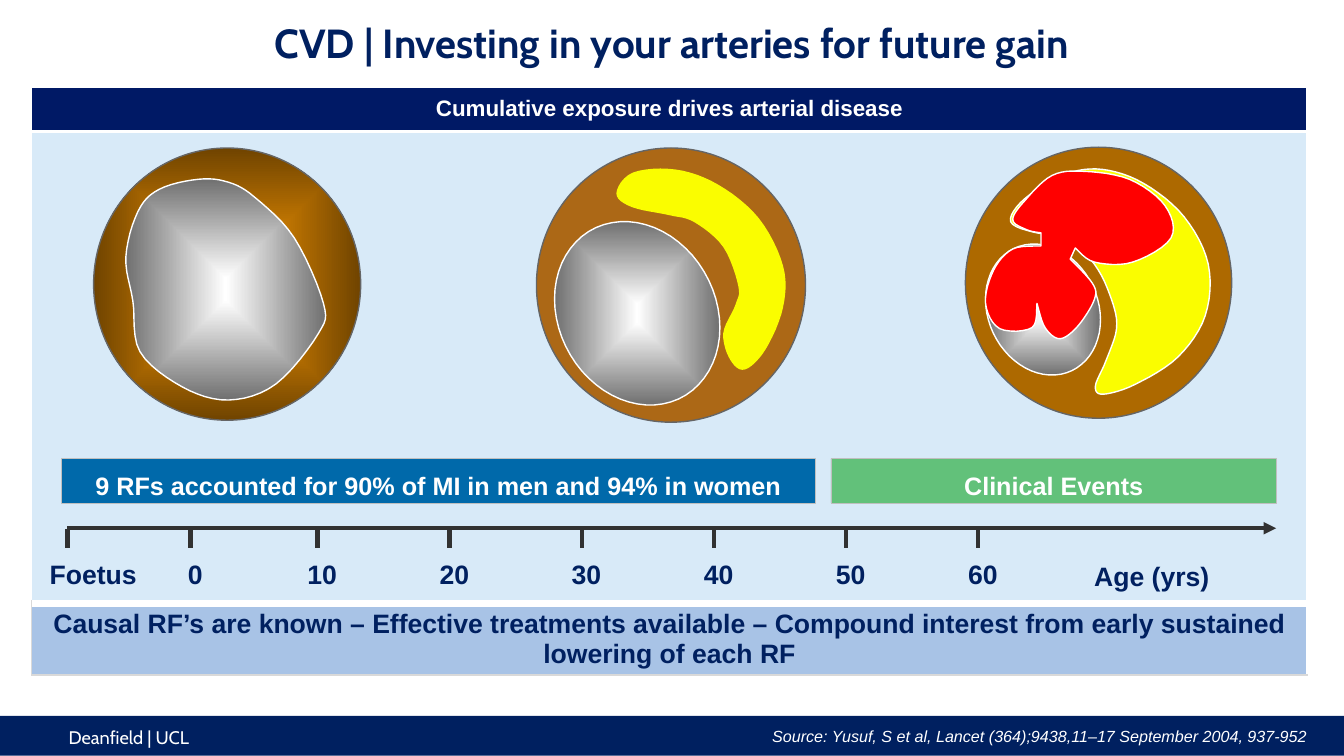
from math import cos, radians, sin

from lxml.etree import SubElement
from pptx import Presentation
from pptx.dml.color import RGBColor
from pptx.enum.shapes import MSO_CONNECTOR, MSO_SHAPE
from pptx.enum.text import MSO_ANCHOR, PP_ALIGN
from pptx.oxml.ns import qn
from pptx.util import Cm, Pt

COLORS = {
    "navy": "002060", "header": "001965", "panel": "D8EAF8", "message": "A8C3E6",
    "white": "FFFFFF", "blue": "0069AA", "green": "62C17A", "axis": "323232",
    "bar_edge": "BFBFBF", "cell_edge": "D9D9D9", "wall_edge": "656565",
    "young_centre": "FE9B03", "young_edge": "704400", "middle_wall": "AC6816",
    "old_wall": "AD6900", "lumen_edge": "707070", "plaque": "FAFD00", "clot": "FF0000",
}
LUMEN_FILL = ("white", "lumen_edge")
LUMEN_SKEW = 9        # degrees by which a narrowed lumen leans
CURVE_STEPS = 6       # points drawn between two landmarks
GRID = 10             # freeform units per landmark unit
LANDMARK_UNIT = Cm(2.54) / 100


def color(name):
    return RGBColor.from_string(COLORS[name])


# Outline rules: points are measured from the top left corner of an artery
def smooth(landmarks, closed=False):
    """Catmull-Rom curve through the landmarks."""
    if closed:
        padded = [landmarks[-1], *landmarks, *landmarks[:2]]
    else:
        padded = [landmarks[0], *landmarks, landmarks[-1]]
    curve = []
    for before, start, end, after in zip(padded, padded[1:], padded[2:], padded[3:]):
        for step in range(CURVE_STEPS):
            t = step / CURVE_STEPS
            curve.append(tuple(
                b + t * (c - a + t * (2 * a - 5 * b + 4 * c - d + t * (3 * b - a - 3 * c + d))) / 2
                for a, b, c, d in zip(before, start, end, after)))
    return curve if closed else curve + [landmarks[-1]]


def narrowed_lumen(center_x, center_y, radius_x, radius_y):
    """Leaning ellipse."""
    return [(center_x + radius_x * cos(radians(angle)),
             center_y + radius_y * sin(radians(angle + LUMEN_SKEW)))
            for angle in range(0, 360, 6)]


def young_lumen():
    upper_right = [(104, 31), (134, 34), (160, 49), (199, 89), (228, 154)]
    lower = [(223, 184), (181, 234), (134, 250), (88, 237), (46, 202)]
    upper_left = [(39, 152), (32, 108), (44, 63), (65, 41)]
    return smooth(upper_right + lower + upper_left, closed=True)


def middle_plaque():
    outer_side = [(96, 25), (138, 22), (180, 37), (220, 70), (244, 117), (244, 158), (227, 199)]
    lower_tip = [(207, 219), (193, 210), (186, 184)]
    inner_side = [(198, 156), (201, 137), (186, 98), (157, 73), (132, 66), (95, 58)]
    upper_tip = [(80, 45)]
    return smooth(outer_side + lower_tip + inner_side + upper_tip, closed=True)


def old_plaque():
    outer_side = [(99, 27), (136, 22), (177, 36), (217, 69), (241, 116), (238, 167), (211, 208)]
    lower_tip = [(169, 235), (137, 245), (129, 237), (139, 213)]
    inner_side = [(150, 180), (145, 151), (128, 116), (98, 88), (71, 85)]
    upper_tip = [(45, 74), (59, 51)]
    return smooth(outer_side + lower_tip + inner_side + upper_tip, closed=True)


def clot():
    """Three rounded lobes that meet at sharp corners."""
    upper_lobe = [(109, 100), (128, 114), (166, 114), (204, 90), (198, 58), (163, 32),
                  (118, 24), (86, 28), (59, 53), (47, 72), (61, 82), (75, 85)]
    left_lobe = [(75, 98), (47, 101), (28, 122), (20, 155), (34, 180), (66, 179), (71, 155)]
    right_lobe = [(71, 155), (79, 179), (94, 190), (112, 177), (128, 151), (126, 135), (104, 111)]
    return smooth(upper_lobe) + smooth(left_lobe) + smooth(right_lobe)


def write(frame, text, size, ink, align=PP_ALIGN.CENTER, font="Arial", bold=True, italic=False,
          spacing=1.0, anchor=MSO_ANCHOR.TOP, insets=(0, 0), wrap=True):
    frame.word_wrap = wrap
    frame.vertical_anchor = anchor
    frame.margin_left = frame.margin_right = Cm(insets[0])
    frame.margin_top = frame.margin_bottom = Cm(insets[1])
    paragraph = frame.paragraphs[0]
    paragraph.alignment, paragraph.line_spacing = align, spacing
    run = paragraph.add_run()
    run.text = text
    run.font.name, run.font.size = font, Pt(size)
    run.font.bold, run.font.italic = bold, italic
    run.font.color.rgb = color(ink)


def add_text(slide, box, text, size, ink, **style):
    write(slide.shapes.add_textbox(*map(Cm, box)).text_frame, text, size, ink, **style)


def paint(shape, fill, edge=None, width=1):
    """Fill with one colour, or with a (centre, edge) pair as a rectangular gradient."""
    shape.shadow.inherit = False
    if isinstance(fill, tuple):
        shape.fill.gradient()
        for stop, name in zip(shape.fill.gradient_stops, fill):
            stop.color.rgb = color(name)
        gradient = shape.element.spPr.find(qn("a:gradFill"))
        gradient.remove(gradient.find(qn("a:lin")))
        rectangle = SubElement(gradient, qn("a:path"), path="rect")
        SubElement(rectangle, qn("a:fillToRect"), dict.fromkeys("ltrb", "50000"))
    else:
        shape.fill.solid()
        shape.fill.fore_color.rgb = color(fill)
    if edge:
        shape.line.color.rgb = color(edge)
        shape.line.width = Pt(width)
    else:
        shape.line.fill.background()


def add_line(slide, start, end, arrow=False):
    connector = slide.shapes.add_connector(MSO_CONNECTOR.STRAIGHT, *map(Cm, start + end))
    connector.line.color.rgb = color("axis")
    connector.line.width = Pt(3)
    properties = connector.element.spPr
    if arrow:
        SubElement(properties.find(qn("a:ln")), qn("a:tailEnd"), type="triangle")
    SubElement(properties, qn("a:effectLst"))


def add_title(slide, box):
    title = slide.shapes.title
    title.left, title.top, title.width, title.height = map(Cm, box)
    write(title.text_frame, "CVD | Investing in your arteries for future gain", 29, "navy",
          font="Cabin", spacing=0.9, anchor=MSO_ANCHOR.MIDDLE)


def add_panel(slide, box):
    table = slide.shapes.add_table(3, 1, *map(Cm, box)).table
    table.first_row = table.horz_banding = False
    message = ("Causal RF’s are known – Effective treatments available – "
               "Compound interest from early sustained lowering of each RF")
    rows = [  # height, fill, text, size, ink, edge colour, top and bottom edge widths
        (1.12, "header", "Cumulative exposure drives arterial disease", 16, "white", "white", 1, 3),
        (11.89, "panel", "", 16, "navy", "white", 3, 6),
        (1.8, "message", message, 19, "navy", "cell_edge", 6, 1)]
    for index, (height, fill, text, size, ink, edge, top, bottom) in enumerate(rows):
        table.rows[index].height = Cm(height)
        cell = table.cell(index, 0)
        if text:
            write(cell.text_frame, text, size, ink)
        cell.vertical_anchor = MSO_ANCHOR.MIDDLE
        cell.margin_left = cell.margin_right = Cm(0.18)
        cell.margin_top = cell.margin_bottom = Cm(0.1)
        properties = cell._tc.get_or_add_tcPr()
        borders = [("a:lnL", edge, 1), ("a:lnR", "white", 2.25),
                   ("a:lnT", "white", top), ("a:lnB", edge, bottom)]
        for tag, name, width in borders:
            border = SubElement(properties, qn(tag), w=str(Pt(width)))
            SubElement(SubElement(border, qn("a:solidFill")), qn("a:srgbClr"), val=COLORS[name])
        cell.fill.solid()
        cell.fill.fore_color.rgb = color(fill)


def add_artery(slide, box, wall, parts):
    group = slide.shapes.add_group_shape()
    left, top, width, height = map(Cm, box)
    paint(group.shapes.add_shape(MSO_SHAPE.OVAL, left, top, width, height), wall, "wall_edge")
    for outline, fill, edge in parts:
        points = [(round(x * GRID), round(y * GRID)) for x, y in outline]
        builder = group.shapes.build_freeform(*points[0], scale=LANDMARK_UNIT / GRID)
        builder.add_line_segments(points[1:], close=True)
        paint(builder.convert_to_shape(left, top), fill, edge)


def add_bar(slide, box, text, fill):
    bar = slide.shapes.add_shape(MSO_SHAPE.RECTANGLE, *map(Cm, box))
    paint(bar, fill, "bar_edge", 0.5)
    write(bar.text_frame, text, 18, "white", spacing=1.2, insets=(0.28, 0.15))


def add_timeline(slide, box):
    left, top, width, height = box
    add_line(slide, (left, top), (left + width, top), arrow=True)
    label_style = {"spacing": 0.9, "insets": (0.2, 0.08)}
    # Label, tick position and shift of the label; decades are evenly spaced
    marks = [("Foetus", 0, 0.65), ("0", 3.1, 0.12)]
    marks += [(str(10 * decade), 2.97 + 3.33 * decade, 0.12) for decade in range(1, 7)]
    for text, tick, shift in marks:
        x = left + tick
        add_line(slide, (x, top + 0.03), (x, top + 0.5))
        add_text(slide, (x + shift - 1.3, top + height - 0.91, 2.6, 0.91), text, 19, "navy",
                 wrap=False, **label_style)
    add_text(slide, (left + 23.82, top + height - 0.86, 7.01, 0.91), "Age (yrs)", 19, "navy",
             **label_style)


def add_footer(slide, box):
    left, top, width, height = box
    paint(slide.shapes.add_shape(MSO_SHAPE.RECTANGLE, *map(Cm, box)), "navy")
    add_text(slide, (left + 1.48, top + 0.13, 4.09, 0.81), "Deanfield | UCL", 13, "white",
             align=PP_ALIGN.LEFT, font="Cabin", bold=False, anchor=MSO_ANCHOR.MIDDLE,
             insets=(0.25, 0.13))
    add_text(slide, (left + 0.33, top + 0.27, width - 1.26, 0.48),
             "Source: Yusuf, S et al, Lancet (364);9438,11–17 September 2004, 937-952", 11.5,
             "white", align=PP_ALIGN.RIGHT, bold=False, italic=True)


def main():
    presentation = Presentation()
    presentation.slide_width, presentation.slide_height = Cm(33.87), Cm(19.05)
    slide = presentation.slides.add_slide(presentation.slide_layouts[5])
    add_title(slide, (0, 0.12, 33.87, 2.06))
    add_footer(slide, (0, 18.04, 33.87, 1))
    add_panel(slide, (0.8, 2.19, 32.14, 14.81))
    # Arteries from youth to old age
    add_artery(slide, (2.36, 3.73, 6.73, 6.86), ("young_centre", "young_edge"),
               [(young_lumen(), LUMEN_FILL, "white")])
    add_artery(slide, (13.52, 3.73, 6.78, 6.91), "middle_wall",
               [(narrowed_lumen(100, 164, 82, 91), LUMEN_FILL, "white"),
                (middle_plaque(), "plaque", "plaque")])
    add_artery(slide, (24.33, 3.71, 6.71, 6.83), "old_wall",
               [(narrowed_lumen(77, 161, 57, 65), LUMEN_FILL, "white"),
                (old_plaque(), "plaque", "white"), (clot(), "clot", "white")])
    # Risk factors and events along the life course
    add_bar(slide, (1.55, 11.56, 19, 1.12),
            "9 RFs accounted for 90% of MI in men and 94% in women", "blue")
    add_bar(slide, (20.94, 11.56, 11.23, 1.12), "Clinical Events", "green")
    add_timeline(slide, (1.7, 13.31, 30.46, 1.67))
    presentation.save("out.pptx")


if __name__ == "__main__":
    main()
